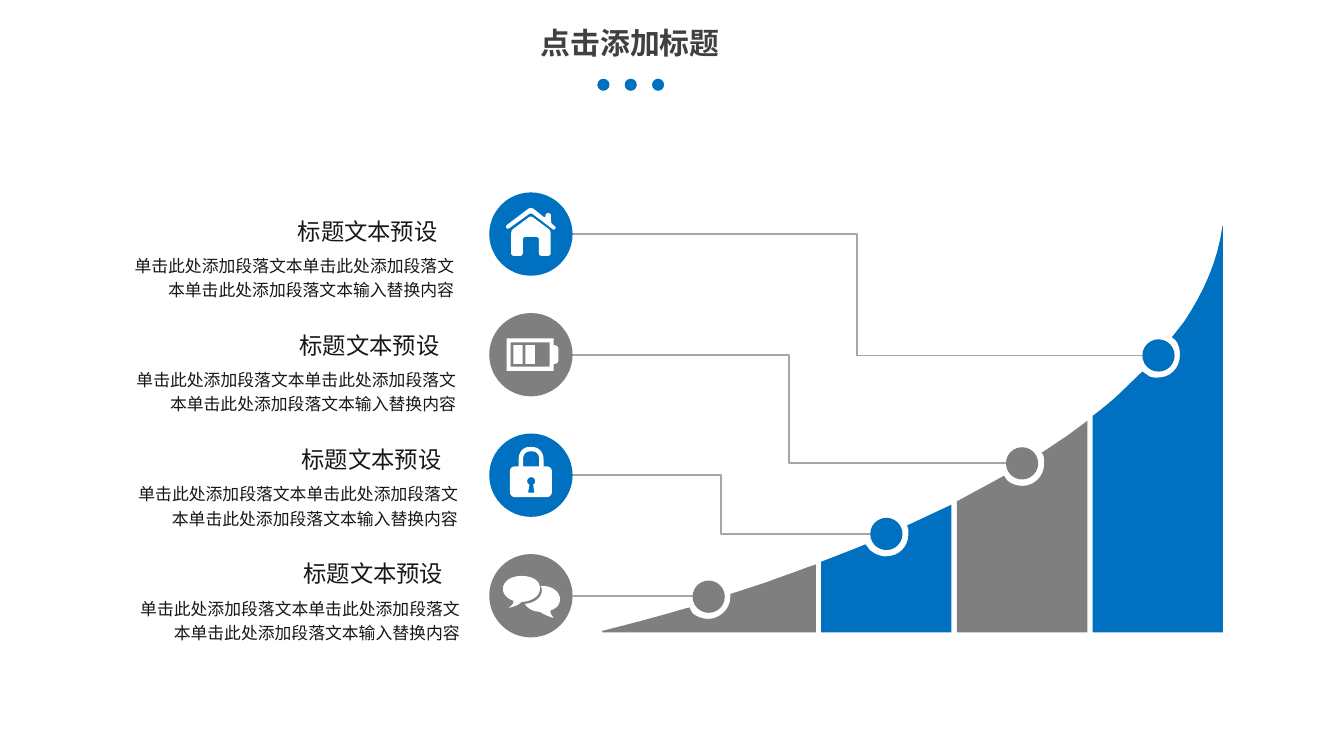
import pptx
import pptx.util
import pptx.dml.color
import pptx.enum.shapes
import pptx.enum.text
import pptx.oxml.ns
import lxml.etree

# The slide is 16:9 and 1000 grid cells wide; every length is counted in cells.
CELL = pptx.util.Inches(0.01)
FINE = 100
CURVE_STEPS = 8

BLUE, GREY, WHITE, LINE = "0070C0", "7F7F7F", "FFFFFF", "A6A6A6"
CJK = "Noto Sans CJK SC"
TITLE = {"size": pptx.util.Pt(16), "name": CJK, "bold": True}
HEADING = {"size": pptx.util.Pt(12.5), "name": "Calibri"}
BODY = {"size": pptx.util.Pt(9), "name": "Calibri"}
SMALL_INSETS = {"margin_left": 7 * CELL, "margin_right": 7 * CELL,
                "margin_top": 5 * CELL, "margin_bottom": 5 * CELL}
SHAPES = pptx.enum.shapes.MSO_SHAPE
CONNECTORS = pptx.enum.shapes.MSO_CONNECTOR
ALIGN = pptx.enum.text.PP_ALIGN

# Outlines: a pair is a corner, six numbers are a cubic curve to the last pair.
# Icon outlines are measured from the centre of their disc.
HOUSE = [(-1.5, -12.5), (-0.5, -13.2, 0.5, -13.2, 1.5, -12.5), (13.5, -3.5),
         (14.3, -2.8, 14.7, -1.5, 14.7, 0), (14.7, 14),
         (14.7, 15.5, 14, 16.2, 12.5, 16.2), (8, 16.2),
         (6.8, 16.2, 6, 15.5, 6, 14), (6, 4.5), (6, 3, 5.2, 2.2, 4, 2.2),
         (-4, 2.2), (-5.2, 2.2, -6, 3, -6, 4.5), (-6, 14),
         (-6, 15.5, -6.8, 16.2, -8, 16.2), (-12.5, 16.2),
         (-14, 16.2, -14.7, 15.5, -14.7, 14), (-14.7, 0),
         (-14.7, -1.5, -14.3, -2.8, -13.5, -3.5)]
ROOF = [(-17.5, -7), (-2, -18.8), (-0.8, -19.6, 0.8, -19.6, 2, -18.8),
        (9.5, -12.8), (10.5, -12.3, 10.9, -12.8, 10.9, -13.6),
        (10.9, -15, 11.8, -15.6, 12.8, -15.6), (14.3, -15.6, 15, -14.8, 15, -13.5),
        (15, -10.5), (15, -9, 15.2, -8, 16, -7.3), (17.3, -6.3),
        (18.6, -5.2, 18.7, -4.5, 18, -3.9), (17.5, -3.2, 16.8, -3.2, 16, -3.8),
        (1.5, -14.8), (0.5, -15.5, -0.5, -15.5, -1.5, -14.8), (-16, -4.4),
        (-17, -3.7, -17.8, -4, -18.2, -4.6), (-18.8, -5.5, -18.4, -6.3, -17.5, -7)]
BATTERY = [(-18, -12), (17, -12), (17, -7), (18.5, -7, 20.5, -6.5, 20.5, -4),
           (20.5, 4), (20.5, 6.5, 18.5, 7, 17, 7), (17, 12), (-18, 12)]
BATTERY_WINDOW = [(-15, -9), (14, -9), (14, 9), (-15, 9)]
LOCK = [(12, -6.5), (9.5, -6.5), (9.5, -12), (9.5, -17, 6, -21, 1, -21), (-1, -21),
        (-6, -21, -9, -17, -9, -12), (-9, -6.5), (-12, -6.5),
        (-14, -6.5, -15.5, -5, -15.5, -3), (-15.5, 12.5),
        (-15.5, 14.5, -14, 16.3, -12, 16.3), (12, 16.3),
        (14, 16.3, 15.7, 14.5, 15.7, 12.5), (15.7, -3), (15.7, -5, 14, -6.5, 12, -6.5)]
KEYHOLE = [(2.7, 13), (-2, 13), (-1, 7), (-2, 6.6, -2.7, 5.5, -2.7, 4.4),
           (-2.7, 2.8, -1.3, 1.5, 0.3, 1.5), (2, 1.5, 3.3, 2.8, 3.3, 4.4),
           (3.3, 5.5, 2.7, 6.6, 1.8, 7)]
SHACKLE_GAP = [(6.3, -6.5), (-5.7, -6.5), (-5.7, -12), (-5.7, -15.5, -3.5, -17.7, -1, -17.7),
               (1.5, -17.7), (4, -17.7, 6.3, -15.5, 6.3, -12)]
BACK_BUBBLE = [(21.7, 2.7), (21.7, -3, 16, -7.3, 8.5, -7.3), (7.2, -7.2),
               (8, -6.2, 8.2, -5, 8.2, -4), (8.2, 1.5, 2.3, 5.7, -4.5, 6),
               (-2.5, 9.7, 2.5, 12, 7, 12), (10.5, 14.8, 17, 16.5, 17, 16.5),
               (14.5, 13.5, 14.5, 12, 14.5, 11), (19, 9.5, 21.7, 6.5, 21.7, 2.7)]
FRONT_BUBBLE = [(6.3, -8.3), (5, -12, 0, -14.7, -7, -14.7),
                (-15, -14.7, -20.8, -10.5, -20.8, -5), (-20.8, -1, -17.5, 2.2, -13, 3.8),
                (-12.7, 5, -13.5, 7, -16.5, 9), (-16.5, 9, -10, 8, -7, 4.7),
                (-6, 4.6), (1.2, 4, 6.7, 0, 6.7, -5), (6.7, -6.3, 6.6, -7.3, 6.3, -8.3)]

BARS = [
    (BLUE, [(910, 167.5), (910, 470.5), (813, 470.5), (813, 309.5), (817, 306.5),
            (824, 301, 830, 296, 836, 290), (850, 276.5), (855, 280),
            (857, 281, 859, 281, 861.5, 281), (871, 281, 878, 274, 878, 264),
            (878, 260, 877, 255, 874, 252.5), (872, 251), (881, 239.5),
            (896, 217, 906, 194, 909.5, 169)]),
    (GREY, [(809, 313), (809, 470.5), (712, 470.5), (712, 373), (738, 359), (747, 354),
            (749, 357), (752, 360, 756, 361.5, 761, 361.5),
            (770, 361.5, 777, 354, 777, 345), (777, 342, 777, 340, 776, 338),
            (775, 337), (790, 327), (796, 323, 801, 319, 806, 315.5)]),
    (BLUE, [(708, 375.5), (708, 470.5), (611, 470.5), (611, 418), (638, 407.5), (644, 405),
            (647, 409), (650, 412, 655, 414, 659, 414), (669, 414, 676, 407, 676, 397),
            (676, 396, 676, 395, 676, 394), (675, 391), (707, 376)]),
    (GREY, [(607, 420), (607, 470.5), (448, 470.5), (448, 469.5), (477, 462),
            (488, 459, 499, 456, 509, 453), (513, 452), (515, 456),
            (518, 459, 523, 460.5, 527, 460.5), (536, 460.5, 543.5, 453, 543.5, 444),
            (543.5, 442), (571, 433), (581, 429, 591, 426, 601, 422)]),
]

# Colour, outlines (each a list of contours), then the dot's left and top.
ITEMS = [
    (BLUE, [[HOUSE], [ROOF]], 850, 252.5),
    (GREY, [[BATTERY, BATTERY_WINDOW]], 748.5, 332.8),
    (BLUE, [[LOCK, KEYHOLE, SHACKLE_GAP]], 647.5, 385.3),
    (GREY, [[BACK_BUBBLE], [FRONT_BUBBLE]], 515.3, 432),
]
ICON_X, ICON_SIZE, DOT_SIZE = 395, 62, 24


def colour(hexa):
    return pptx.dml.color.RGBColor.from_string(hexa)


def apply(target, formats):
    for name, value in formats.items():
        setattr(target, name, value)


def paint(shape, fill):
    shape.shadow.inherit = False
    shape.fill.solid()
    shape.fill.fore_color.rgb = colour(fill)
    shape.line.fill.background()


def add_preset(page, kind, left, top, width, height, fill):
    cells = (round(value * CELL) for value in (left, top, width, height))
    paint(page.shapes.add_shape(kind, *cells), fill)


def add_disc(page, left, top, size, fill):
    add_preset(page, SHAPES.OVAL, left, top, size, size, fill)


def flatten(contour):
    """Turn corners and cubic curves into a list of points."""
    points = []
    for piece in contour:
        if len(piece) == 2:
            points.append(piece)
            continue
        nodes = [points[-1], piece[:2], piece[2:4], piece[4:]]
        for step in range(1, CURVE_STEPS + 1):
            t = step / CURVE_STEPS
            weights = ((1 - t) ** 3, 3 * t * (1 - t) ** 2, 3 * t * t * (1 - t), t ** 3)
            points.append(tuple(sum(w * node[axis] for w, node in zip(weights, nodes))
                                for axis in (0, 1)))
    return points


def add_outline(page, contours, fill, centre=(0, 0)):
    placed = [[((x + centre[0]) * FINE, (y + centre[1]) * FINE) for x, y in flatten(contour)]
              for contour in contours]
    builder = page.shapes.build_freeform(*placed[0][0], scale=CELL / FINE)
    for number, points in enumerate(placed):
        if number:
            builder.move_to(*points[0])
        builder.add_line_segments(points[1:], close=True)
    paint(builder.convert_to_shape(), fill)


def add_link(page, kind, start, end):
    link = page.shapes.add_connector(kind, *(round(value * CELL) for value in start + end))
    link.line.color.rgb = colour(LINE)
    link.line.width = pptx.util.Pt(1)
    lxml.etree.SubElement(link._element.spPr, pptx.oxml.ns.qn("a:effectLst"))


def add_text(page, place, text, font, ink, frame_formats, para_formats):
    box = page.shapes.add_textbox(*(round(value * CELL) for value in place))
    apply(box.text_frame, {"word_wrap": True, **frame_formats})
    para = box.text_frame.paragraphs[0]
    apply(para, para_formats)
    span = para.add_run()
    span.text = text
    apply(span.font, font)
    span.font.color.rgb = colour(ink)
    east = lxml.etree.SubElement(span.font._element, pptx.oxml.ns.qn("a:ea"))
    east.set("typeface", CJK)


def add_header(page):
    add_text(page, (247, 13.5, 444, 37), "点击添加标题", TITLE, "404040",
             {"auto_size": pptx.enum.text.MSO_AUTO_SIZE.SHAPE_TO_FIT_TEXT},
             {"alignment": ALIGN.CENTER})
    for number in range(3):
        add_disc(page, 444.5 + 20.3 * number, 58.6, 9, BLUE)


def add_icon(page, fill, outlines, centre):
    add_disc(page, ICON_X - ICON_SIZE / 2, centre[1] - ICON_SIZE / 2, ICON_SIZE, fill)
    for contours in outlines:
        add_outline(page, contours, WHITE, centre)


def add_caption(page, number):
    left, top = 83.6 + 1.4 * number, 182.3 + 85 * number
    add_text(page, (left, top, 261, 46),
             "单击此处添加段落文本" * 3 + "输入替换内容", BODY, "181717",
             SMALL_INSETS, {"alignment": ALIGN.RIGHT, "line_spacing": 1.2})
    add_text(page, (left + 131, top - 26, 180, 29), "标题文本预设", HEADING, "181717",
             {**SMALL_INSETS, "word_wrap": False}, {})


def main():
    deck = pptx.Presentation()
    deck.slide_width = 1000 * CELL
    deck.slide_height = deck.slide_width * 9 // 16
    page = deck.slides.add_slide(deck.slide_layouts[6])
    add_header(page)
    rows = [174.2 + 89.7 * number for number in range(len(ITEMS))]
    for row, (fill, outlines, dot_left, dot_top) in zip(rows, ITEMS):
        start = (ICON_X + ICON_SIZE / 2, row)
        if row == rows[-1]:
            add_link(page, CONNECTORS.STRAIGHT, (dot_left + 16, row), start)
        else:
            add_link(page, CONNECTORS.ELBOW, start, (dot_left, dot_top + DOT_SIZE / 2))
        add_icon(page, fill, outlines, (ICON_X, row))
    for left in (-13, -4):
        add_preset(page, SHAPES.RECTANGLE, ICON_X + left, rows[1] - 7, 7, 14, WHITE)
    for fill, contour in BARS:
        add_outline(page, [contour], fill)
    for fill, _, dot_left, dot_top in ITEMS:
        add_disc(page, dot_left, dot_top, DOT_SIZE, fill)
    for number in range(len(ITEMS)):
        add_caption(page, number)
    deck.save("out.pptx")


if __name__ == "__main__":
    main()
